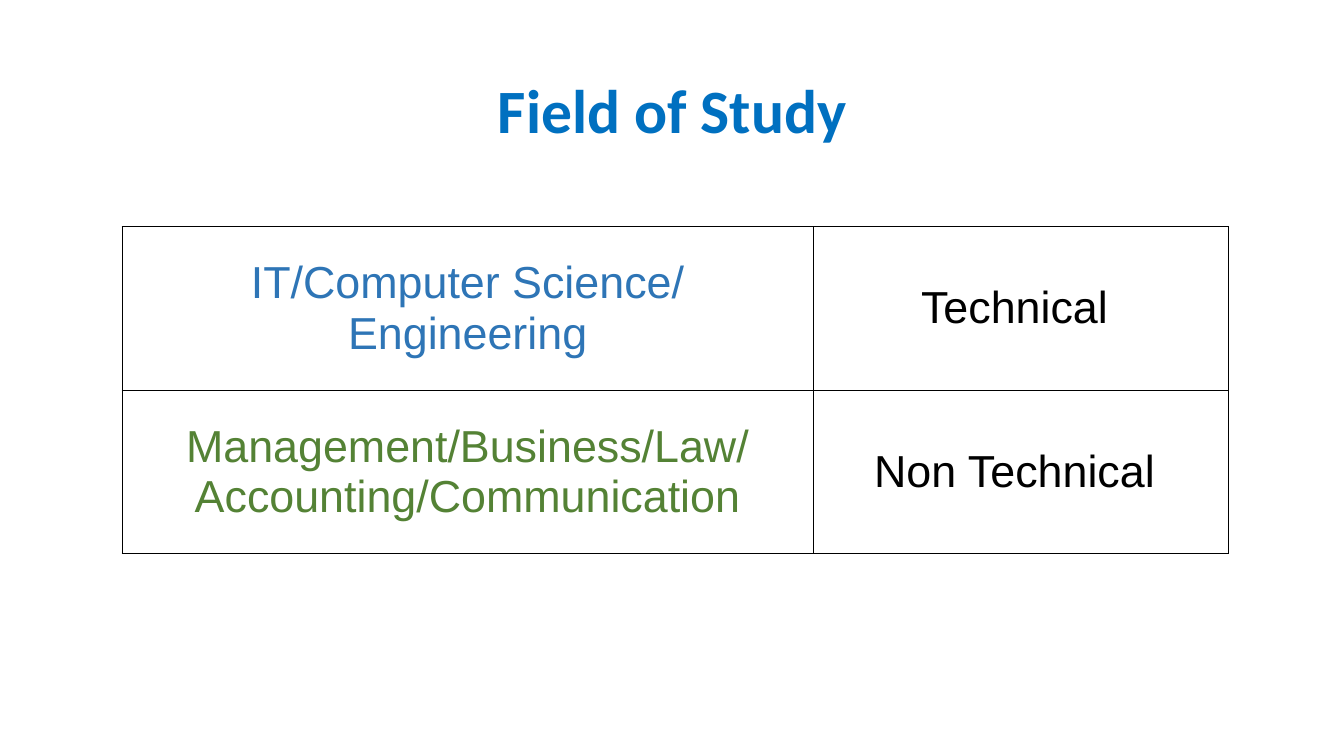
import pptx
import pptx.dml.color
import pptx.enum.text
import pptx.oxml
import pptx.oxml.ns
import pptx.util

RGBColor = pptx.dml.color.RGBColor
WHITE = RGBColor(0xFF, 0xFF, 0xFF)
BLACK = RGBColor(0, 0, 0)
TITLE_BLUE = RGBColor(0x00, 0x70, 0xC0)
BLUE = RGBColor(0x2E, 0x75, 0xB6)
GREEN = RGBColor(0x54, 0x82, 0x35)

FIELDS = [
    ("IT/Computer Science/\nEngineering", BLUE, "Technical "),
    ("Management/Business/Law/\nAccounting/Communication", GREEN, "Non Technical "),
]


def write(tf, text, *, font, size, color, bold=False, spacing=None):
    tf.text = text
    for p in tf.paragraphs:
        p.alignment = pptx.enum.text.PP_ALIGN.CENTER
        p.line_spacing = spacing
        for r in p.runs:
            r.font.name = font
            r.font.size = pptx.util.Pt(size)
            r.font.bold = bold
            r.font.color.rgb = color


class Deck:
    title_font = "Calibri"
    body_font = "Arial"
    columns = rows = 100

    def __init__(self):
        self.prs = pptx.Presentation()
        self.prs.slide_width = pptx.util.Inches(13.33)
        self.prs.slide_height = pptx.util.Inches(7.5)
        self.s = self.prs.slides.add_slide(self.prs.slide_layouts[5])

    def x(self, columns):
        return round(self.prs.slide_width * columns / self.columns)

    def y(self, rows):
        return round(self.prs.slide_height * rows / self.rows)

    def title(self, text, left, top, width, height):
        sp = self.s.shapes.title
        sp.left, sp.top = self.x(left), self.y(top)
        sp.width, sp.height = self.x(width), self.y(height)
        write(sp.text_frame, text, font=self.title_font, size=44,
              color=TITLE_BLUE, bold=True, spacing=0.9)
        sp.text_frame.vertical_anchor = pptx.enum.text.MSO_ANCHOR.MIDDLE

    def border(self, cell, color, width):
        tc_pr = cell._tc.get_or_add_tcPr()
        for side in "LRTB":
            tc_pr.append(pptx.oxml.parse_xml(
                f'<a:ln{side} {pptx.oxml.ns.nsdecls("a")} w="{pptx.util.Pt(width)}">'
                f'<a:solidFill><a:srgbClr val="{color}"/></a:solidFill></a:ln{side}>'))

    def cell(self, cell, text, color):
        cell.margin_left = cell.margin_right = cell.margin_top = cell.margin_bottom = 0
        cell.vertical_anchor = pptx.enum.text.MSO_ANCHOR.MIDDLE
        self.border(cell, BLACK, 0.5)
        cell.fill.solid()
        cell.fill.fore_color.rgb = WHITE
        write(cell.text_frame, text, font=self.body_font, size=32, color=color)

    def table(self, data, left, top, widths, row_height):
        table = self.s.shapes.add_table(
            len(data), len(widths), self.x(left), self.y(top),
            self.x(sum(widths)), self.y(row_height * len(data))).table
        table.first_row = table.horz_banding = False
        for column, width in zip(table.columns, widths):
            column.width = self.x(width)
        for row, (field, color, kind) in zip(table.rows, data):
            row.height = self.y(row_height)
            self.cell(row.cells[0], field, color)
            self.cell(row.cells[1], kind, BLACK)


def main():
    deck = Deck()
    deck.title("Field of Study", 6.9, 5.33, 86.27, 19.33)
    deck.table(FIELDS, 9.08, 30, (51.46, 30.83), 21.6)
    deck.prs.save("out.pptx")


if __name__ == "__main__":
    main()
